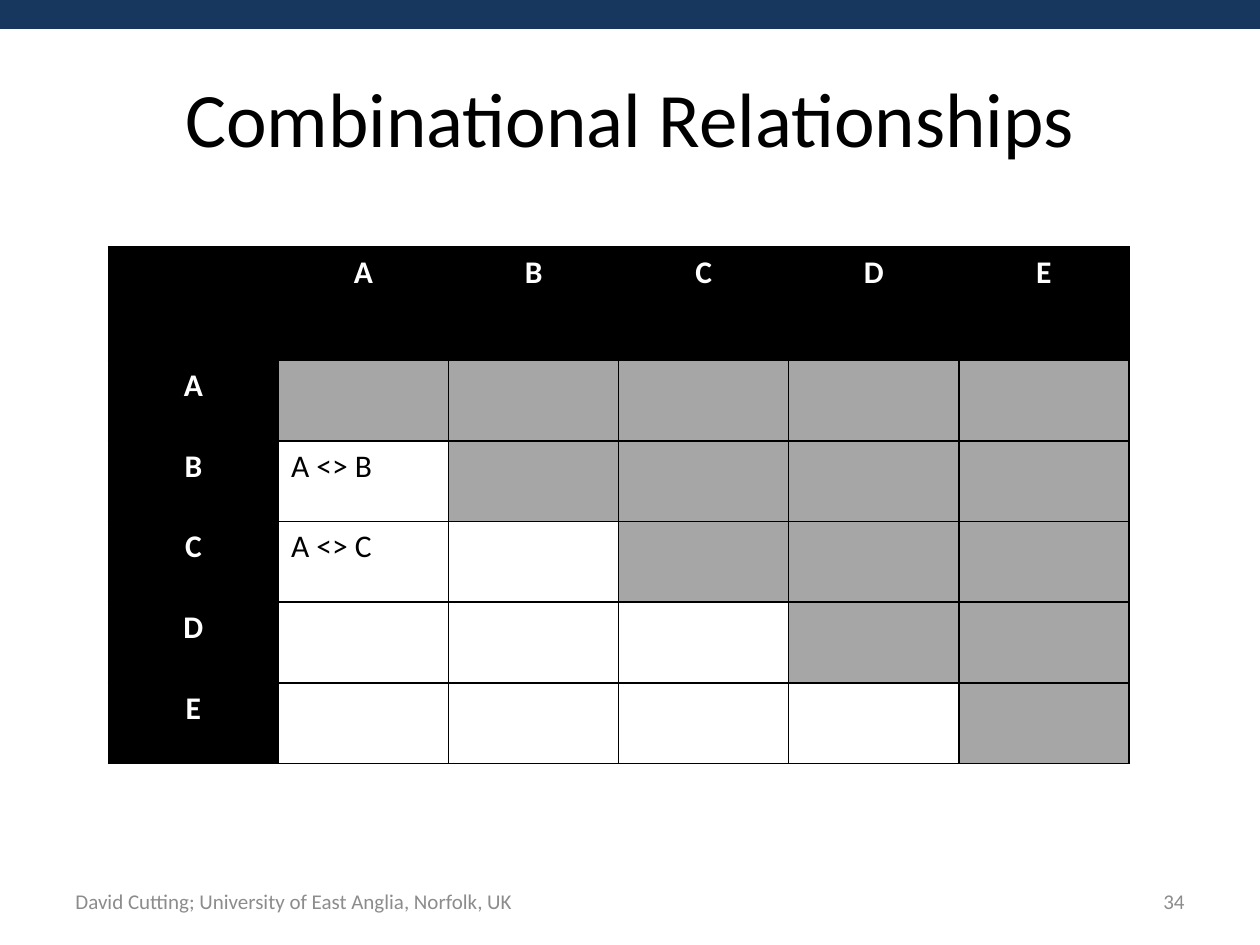
from lxml.etree import SubElement
from pptx import Presentation
from pptx.dml.color import RGBColor
from pptx.enum.shapes import MSO_SHAPE as Shape
from pptx.enum.text import MSO_ANCHOR as Anchor, PP_ALIGN as Align
from pptx.oxml.ns import qn
from pptx.util import Inches, Pt

NAVY, BLACK, WHITE = "17375E", "000000", "FFFFFF"
SHADE, FOOTER_GREY = "A6A6A6", "8C8C8C"


def color(hex_value):
    return RGBColor.from_string(hex_value)


def write(frame, text, size=18, hue=BLACK, bold=False, align=Align.LEFT):
    para = frame.paragraphs[0]
    para.alignment = align
    span = para.add_run()
    span.text = text
    span.font.name = "Calibri"
    span.font.size = Pt(size)
    span.font.bold = bold
    span.font.color.rgb = color(hue)


def outline_cell(cell, hue=BLACK, width=1):
    props = cell._tc.get_or_add_tcPr()
    for index, side in enumerate(("lnL", "lnR", "lnT", "lnB")):
        line = props.makeelement(qn(f"a:{side}"), {"w": str(Pt(width))})
        fill = SubElement(line, qn("a:solidFill"))
        SubElement(fill, qn("a:srgbClr"), val=hue)
        props.insert(index, line)  # borders come before the fill


class SlideBuilder:
    def __init__(self, page):
        self.page = page

    def place(self, item, left, top, width, height):
        item.left, item.top = Inches(left), Inches(top)
        item.width, item.height = Inches(width), Inches(height)

    def bar(self, *area, hue):
        box = self.page.shapes.add_shape(Shape.RECTANGLE, *map(Inches, area))
        box.shadow.inherit = False
        box.fill.solid()
        box.fill.fore_color.rgb = color(hue)
        box.line.fill.background()

    def title(self, text, *area):
        box = self.page.shapes.title
        self.place(box, *area)
        box.text_frame.vertical_anchor = Anchor.MIDDLE
        write(box.text_frame, text, size=44, align=Align.CENTER)

    def label(self, text, *area, **style):
        box = self.page.shapes.add_textbox(*map(Inches, area))
        box.text_frame.word_wrap = True
        box.text_frame.vertical_anchor = Anchor.MIDDLE
        write(box.text_frame, text, **style)

    def pair_matrix(self, names, pairs, left, top, col_width, head_height, row_height):
        count = len(names) + 1
        frame = self.page.shapes.add_table(
            count, count, Inches(left), Inches(top), Inches(col_width * count),
            Inches(head_height + row_height * len(names)))
        table = frame.table
        for index in range(count):
            table.columns[index].width = Inches(col_width)
            table.rows[index].height = Inches(row_height if index else head_height)
        for row in range(count):
            for col in range(count):
                cell = table.cell(row, col)
                is_head = row == 0 or col == 0
                # Only pairs below the diagonal are open
                hue = BLACK if is_head else SHADE if col >= row else WHITE
                cell.fill.solid()
                cell.fill.fore_color.rgb = color(hue)
                outline_cell(cell)
                if is_head and row != col:
                    write(cell.text_frame, names[max(row, col) - 1],
                          hue=WHITE, bold=True, align=Align.CENTER)
                elif (row, col) in pairs:
                    write(cell.text_frame, f"{names[col - 1]} <> {names[row - 1]}")


def main():
    deck = Presentation()
    deck.slide_width, deck.slide_height = Inches(10), Inches(7.5)
    slide = SlideBuilder(deck.slides.add_slide(deck.slide_layouts[5]))

    # Top band and title
    slide.bar(0, -0.01, 10, 0.24, hue=NAVY)
    slide.title("Combinational Relationships", 0.5, 0.3, 9, 1.25)

    # Footer
    slide.label("David Cutting; University of East Anglia, Norfolk, UK",
                0.5, 6.95, 6.08, 0.4, size=12, hue=FOOTER_GREY)
    slide.label("34", 7.17, 6.95, 2.33, 0.4,
                size=12, hue=FOOTER_GREY, align=Align.RIGHT)

    # Relationship matrix, with the filled pairs as (row, column)
    slide.pair_matrix("ABCDE", {(2, 1), (3, 1)}, left=0.86, top=1.96,
                      col_width=1.35, head_height=0.9, row_height=0.64)

    deck.save("out.pptx")


if __name__ == "__main__":
    main()
